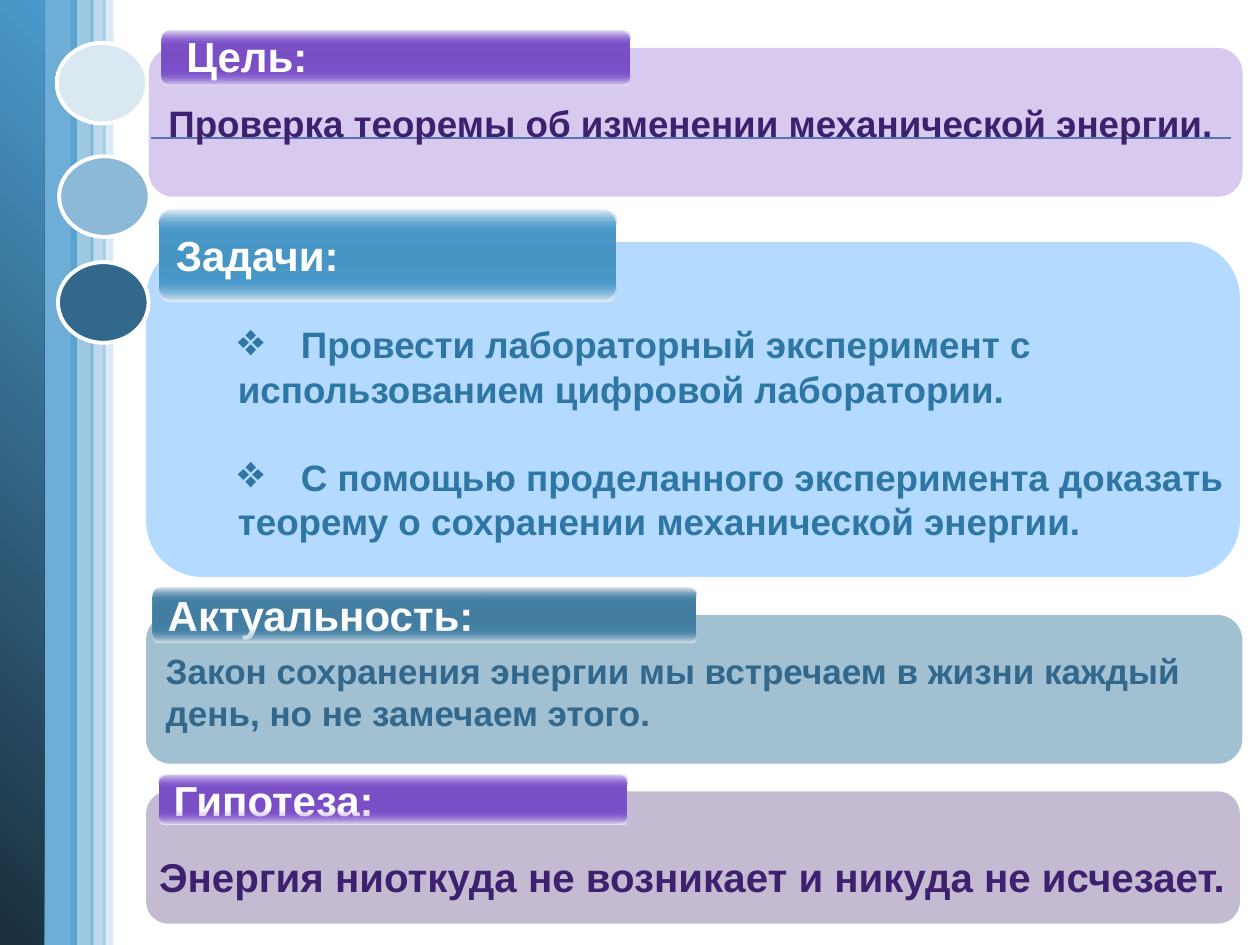
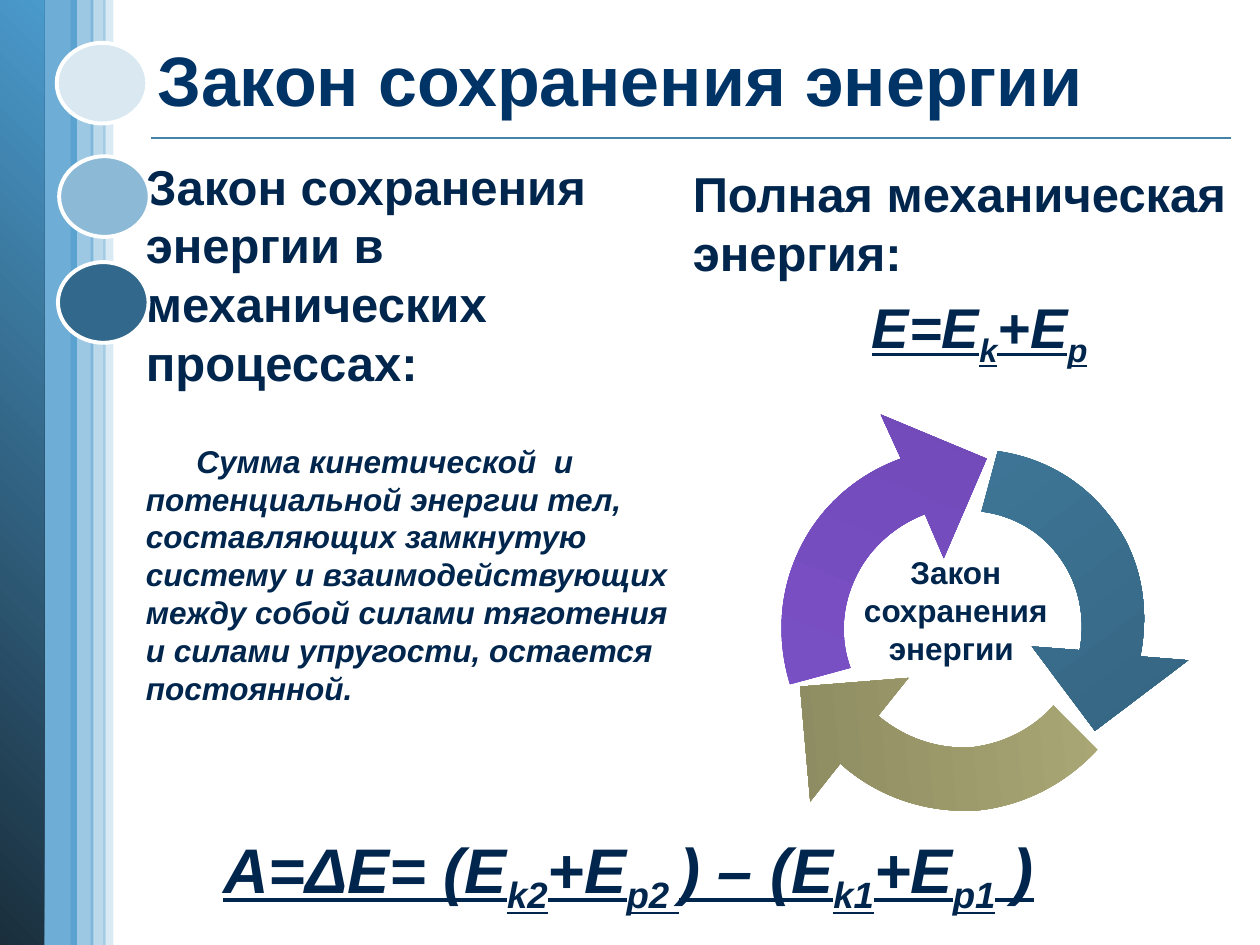
from dataclasses import dataclass
from math import cos, radians, sin
from typing import NamedTuple

from lxml import etree
from pptx import Presentation
from pptx.dml.color import RGBColor
from pptx.enum import shapes as kinds, text as txt
from pptx.oxml.ns import qn
from pptx.util import Pt

LEFT, MID = txt.PP_ALIGN.LEFT, txt.PP_ALIGN.CENTER
TOP, CORE = txt.MSO_ANCHOR.TOP, txt.MSO_ANCHOR.MIDDLE
RECT, ROUND, OVAL = (
    kinds.MSO_SHAPE.RECTANGLE,
    kinds.MSO_SHAPE.ROUNDED_RECTANGLE,
    kinds.MSO_SHAPE.OVAL,
)


@dataclass(frozen=True)
class Theme:
    font: str = "Arial"
    white: str = "FFFFFF"
    band: str = "4A9ACC"
    deep: str = "1A2E3C"
    steel: str = "4582A7"
    dark: str = "315D77"
    slate: str = "31688B"
    pale: str = "D9E8F1"
    soft: str = "8CBAD6"
    sky: str = "0A85FF"
    task: str = "2E76A3"
    plum: str = "7E52CC"
    grape: str = "3D216E"
    violet: str = "7049B5"
    sand: str = "B2AF7A"
    olive: str = "8A885F"
    navy: str = "003366"
    ink: str = "00264D"
    title: float = 40
    sum: float = 36
    math: float = 32
    head: float = 28
    label: float = 24
    claim: float = 23
    goal: float = 21
    note: float = 20
    body: float = 18


T = Theme()


class Box(NamedTuple):
    x: float
    y: float
    w: float
    h: float


class Stop(NamedTuple):
    pos: float
    tint: str
    alpha: float = 100


class Run(NamedTuple):
    text: str
    sub: bool = False


@dataclass(frozen=True)
class Para:
    runs: tuple[Run, ...]
    size: float
    tint: str = T.ink
    align: txt.PP_ALIGN = LEFT
    slant: bool = False
    under: bool = False
    gap: float = 0
    left: float = 0
    indent: float = 0
    bullet: str = ""


@dataclass(frozen=True)
class Gloss:
    edge: str
    mid: str
    glow: str
    shine: str


@dataclass(frozen=True)
class Panel:
    box: Box
    tint: str
    alpha: float
    paras: tuple[Para, ...]
    tab: Box
    gloss: Gloss
    label: str = ""
    drop: float = 0


@dataclass(frozen=True)
class Arrow:
    box: Box
    turn: float
    start: tuple[float, float]
    steps: tuple[tuple[float, ...], ...]
    stops: tuple[Stop, ...]


def say(text: str, size: float, tint: str = T.ink, **more) -> Para:
    return Para((Run(text),), size, tint, **more)


def terms(line: str) -> tuple[Run, ...]:
    return tuple(Run(part, bool(i % 2)) for i, part in enumerate(line.split("|")))


def pts(box: Box) -> list[int]:
    return [Pt(v) for v in box]


def fade(node, alpha: float) -> None:
    if alpha < 100:
        etree.SubElement(node, qn("a:alpha")).set("val", str(round(alpha * 1000)))


def flat(shape, tint: str, alpha: float = 100) -> None:
    shape.fill.solid()
    shape.fill.fore_color.rgb = RGBColor.from_string(tint)
    fade(shape._element.spPr.find(f"{qn('a:solidFill')}/{qn('a:srgbClr')}"), alpha)


def blend(shape, stops: tuple[Stop, ...], angle: float = 90) -> None:
    shape.fill.gradient()
    grad = shape._element.spPr.find(qn("a:gradFill"))
    grad.find(qn("a:lin")).set("ang", str(round(angle * 60000)))
    ramp = grad.find(qn("a:gsLst"))
    for old in list(ramp):
        ramp.remove(old)
    for stop in stops:
        mark = etree.SubElement(ramp, qn("a:gs"), pos=str(round(stop.pos * 1000)))
        fade(etree.SubElement(mark, qn("a:srgbClr"), val=stop.tint), stop.alpha)


def form(slide, kind, box: Box, curve: float | None = None):
    shape = slide.shapes.add_shape(kind, *pts(box))
    shape.shadow.inherit = False
    shape.line.fill.background()
    if curve is not None:
        shape.adjustments[0] = curve
    return shape


def write(shape, paras: tuple[Para, ...], anchor=TOP, wrap: bool = True, drop: float = 3.6) -> None:
    frame = shape.text_frame
    frame.word_wrap = wrap
    frame.vertical_anchor = anchor
    frame.margin_top = Pt(drop)
    for i, item in enumerate(paras):
        par = frame.add_paragraph() if i else frame.paragraphs[0]
        par.alignment = item.align
        props = par._p.get_or_add_pPr()
        props.set("marL", str(Pt(item.left)))
        props.set("indent", str(Pt(item.indent)))
        if item.bullet:
            etree.SubElement(props, qn("a:buSzPct"), val="125000")
            etree.SubElement(props, qn("a:buChar"), char=item.bullet)
        else:
            etree.SubElement(props, qn("a:buNone"))
        if item.gap:
            par.space_before = Pt(item.gap)
        font = par.font
        font.name, font.size, font.bold = T.font, Pt(item.size), True
        font.italic, font.underline = item.slant, item.under
        font.color.rgb = RGBColor.from_string(item.tint)
        for part in item.runs:
            run = par.add_run()
            run.text = part.text
            if part.sub:
                run._r.get_or_add_rPr().set("baseline", "-25000")


def note(slide, box: Box, *paras: Para, **more) -> None:
    write(slide.shapes.add_textbox(*pts(box)), paras, **more)


def base(deck):
    slide = deck.slides.add_slide(deck.slide_layouts[6])
    rule = slide.shapes.add_connector(
        kinds.MSO_CONNECTOR.STRAIGHT, Pt(86.4), Pt(78.8), Pt(703.4), Pt(78.8))
    rule.line.color.rgb = RGBColor.from_string(T.steel)
    rule.line.width = Pt(1)
    etree.SubElement(rule._element.spPr, qn("a:effectLst"))
    flat(form(slide, RECT, Box(21.6, 0, 22.3, 542)), T.band, 80)
    edge = form(slide, RECT, Box(-0.7, 0, 25.9, 540))
    blend(edge, (Stop(0, T.deep), Stop(100, T.band)), 315)
    for x, y, w, alpha in ((59, -1.4, 5.8, 20), (40.3, 0, 13, 54), (51.8, 0, 8.6, 37)):
        flat(form(slide, RECT, Box(x, y, w, 541.4)), T.band, alpha)
    return slide


def beads(slide) -> None:
    for x, y, tint in ((32.4, 24.5, T.pale), (33.8, 89.3, T.soft), (33.1, 149.8, T.slate)):
        bead = form(slide, OVAL, Box(x, y, 51.8, 46.1))
        flat(bead, tint)
        bead.line.color.rgb = RGBColor.from_string(T.white)
        bead.line.width = Pt(2.25)


def panel(slide, item: Panel) -> None:
    body = form(slide, ROUND, item.box, 0.167)
    flat(body, item.tint, item.alpha)
    if item.drop:
        write(body, item.paras, TOP, False, item.drop)
    else:
        write(body, item.paras, CORE, False)
    tab, hue = item.tab, item.gloss
    cap = form(slide, ROUND, tab, 0.175)
    blend(cap, (Stop(0, hue.edge), Stop(50, hue.mid), Stop(100, hue.edge)))
    if item.label:
        write(cap, (say(item.label, T.label, T.white),), CORE, False)
    thick = tab.h / 4
    low = form(slide, ROUND, Box(tab.x, tab.y + tab.h - thick, tab.w, thick), 0.5)
    blend(low, (Stop(0, hue.edge, 0), Stop(100, hue.glow)))
    high = form(slide, ROUND, Box(tab.x, tab.y, tab.w, thick), 0.5)
    blend(high, (Stop(0, hue.shine), Stop(100, hue.edge, 0)))


def spin(box: Box, turn: float, x: float, y: float) -> tuple[int, int]:
    mx, my = box.x + box.w / 2, box.y + box.h / 2
    c, s = cos(radians(turn)), sin(radians(turn))
    return (Pt(mx + (x - mx) * c + (y - my) * s),
            Pt(my - (x - mx) * s + (y - my) * c))


def bend(slide, item: Arrow) -> None:
    box = item.box
    dots = [spin(box, item.turn, *step[k:k + 2])
            for step in item.steps for k in range(0, len(step), 2)]
    pen = slide.shapes.build_freeform(*spin(box, item.turn, *item.start))
    pen.add_line_segments(dots, close=True)
    shape = pen.convert_to_shape()
    x, y, w, h = pts(box)
    geo = next(shape._element.spPr.iter(qn("a:path")))
    for dot in geo.iter(qn("a:pt")):
        dot.set("x", str(int(dot.get("x")) + shape.left - x))
        dot.set("y", str(int(dot.get("y")) + shape.top - y))
    geo.set("w", str(w))
    geo.set("h", str(h))
    lines = iter(geo.findall(qn("a:lnTo")))
    for step in item.steps:
        first = next(lines)
        if len(step) == 6:
            first.tag = qn("a:cubicBezTo")
            for line in (next(lines), next(lines)):
                first.append(line[0])
                geo.remove(line)
    shape.left, shape.top, shape.width, shape.height = x, y, w, h
    shape.rotation = item.turn
    shape.shadow.inherit = False
    shape.line.fill.background()
    blend(shape, item.stops)


BLUE = Gloss(T.band, "4795C5", "EAF0F6", "EEF3F8")
STEEL = Gloss(T.steel, "437DA1", "E2E7ED", "EAEDF1")
PLUM = Gloss(T.plum, "7A4FC5", "ECE9F6", "EAE7F5")


def task(first: str, second: str, gap: float = 0) -> tuple[Para, Para]:
    return (
        say(first, T.goal, T.task, left=72, indent=-36, bullet="❖", gap=gap),
        say(second, T.goal, T.task, left=36),
    )


PANELS = (
    Panel(Box(83.5, 138.2, 625, 191.5), T.sky, 30,
          task("Провести лабораторный эксперимент с",
               "использованием цифровой лаборатории.")
          + task("С помощью проделанного эксперимента доказать",
                 "теорему о сохранении механической энергии.", 25.2),
          Box(90.7, 119.5, 261.4, 52.6), BLUE, "Задачи:", 36.6),
    Panel(Box(83.5, 351.4, 626.4, 85), T.steel, 50,
          (say("Закон сохранения энергии мы встречаем в жизни каждый", T.note, T.slate),
           say("день, но не замечаем этого.", T.note, T.slate)),
          Box(87.1, 335.5, 311, 31.7), STEEL, "Актуальность:", 15.6),
    Panel(Box(85, 27.4, 625, 85), T.plum, 30,
          (say("Проверка теоремы об изменении механической энергии.", T.goal, T.grape),),
          Box(92.2, 17.3, 267.8, 31.7), PLUM),
    Panel(Box(83.5, 452.2, 625, 75.6), T.grape, 30,
          (say("Энергия ниоткуда не возникает и никуда не исчезает.",
               T.claim, T.grape, align=MID),),
          Box(90.7, 442.8, 267.8, 28.1), PLUM, "Гипотеза:", 31.1),
)

ARROWS = (
    Arrow(Box(426.2, 260.6, 231.8, 208.1), 322.8, (617, 371.5), (
        (620.6, 352.1, 616.3, 332.6, 604.8, 317.5), (594.7, 303.8, 578.9, 294.5, 560.9, 292.3),
        (570.2, 257.8),
        (596.2, 261.4, 619.2, 275, 634.3, 295.2), (651.6, 316.8, 657.4, 346.3, 651.6, 375.1),
        (679, 377.3), (625.7, 417.6), (589.7, 369.4)),
        (Stop(0, T.steel), Stop(100, T.dark))),
    Arrow(Box(436.3, 243.4, 225.4, 214.6), 84.6, (501.8, 409), (
        (517, 421.9, 536.4, 428.4, 555.8, 427), (573.1, 424.8, 589.7, 416.9, 601.9, 403.2),
        (627.1, 428.4),
        (609.1, 447.8, 585.4, 460.1, 559.4, 463), (530.6, 465.1, 501.8, 455.8, 480.2, 436.3),
        (463, 457.9), (457.2, 392.4), (519.1, 387.4)),
        (Stop(0, T.sand), Stop(100, T.olive))),
    Arrow(Box(445.7, 255.6, 225.4, 214.6), 202.4, (528.5, 293.8), (
        (509.8, 301, 494.6, 315.4, 487.4, 333.4), (481, 348.5, 480.2, 365.8, 486, 381.6),
        (451.4, 391),
        (444.2, 367.2, 445, 342, 454.3, 319.7), (465.1, 293, 486.7, 272.2, 514.8, 262.1),
        (503.3, 236.9), (563.8, 262.1), (539.3, 319)),
        (Stop(0, T.plum), Stop(100, T.violet))),
)


def goals(deck) -> None:
    slide = base(deck)
    for item in PANELS[:2]:
        panel(slide, item)
    beads(slide)
    for item in PANELS[2:]:
        panel(slide, item)
    note(slide, Box(95, 13.7, 92.2, 36), say("Цель:", T.label, T.white, align=MID))


def law(deck) -> None:
    slide = base(deck)
    note(slide, Box(82.8, 5, 626.4, 80), say("Закон сохранения энергии", T.title, T.navy),
         anchor=CORE)
    note(slide, Box(76.3, 85.7, 317.5, 362.9),
         say("Закон сохранения энергии в механических процессах:", T.head),
         say("Сумма кинетической  и потенциальной энергии тел, составляющих замкнутую "
             "систему и взаимодействующих между собой силами тяготения и силами "
             "упругости, остается постоянной.", T.body, slant=True, indent=28.8, gap=28.8))
    note(slide, Box(388.8, 90, 342, 181.4),
         say("Полная механическая энергия:", T.head),
         Para(terms("Е=Е|k|+Е|p"), T.math, align=MID, slant=True, under=True, gap=6.4))
    note(slide, Box(120.2, 470.9, 478, 69),
         Para(terms("A=ΔE= (Е|k2|+Е|p2 |) – (Е|k1|+Е|p1| )"), T.sum,
              align=MID, slant=True, under=True), wrap=False)
    beads(slide)
    for item in ARROWS:
        bend(slide, item)
    note(slide, Box(485.3, 312.5, 121.7, 72.7),
         say("Закон сохранения энергии ", T.body, align=MID))


def main() -> None:
    deck = Presentation()
    deck.slide_width, deck.slide_height = Pt(720), Pt(540)
    goals(deck)
    law(deck)
    deck.save("out.pptx")


if __name__ == "__main__":
    main()
